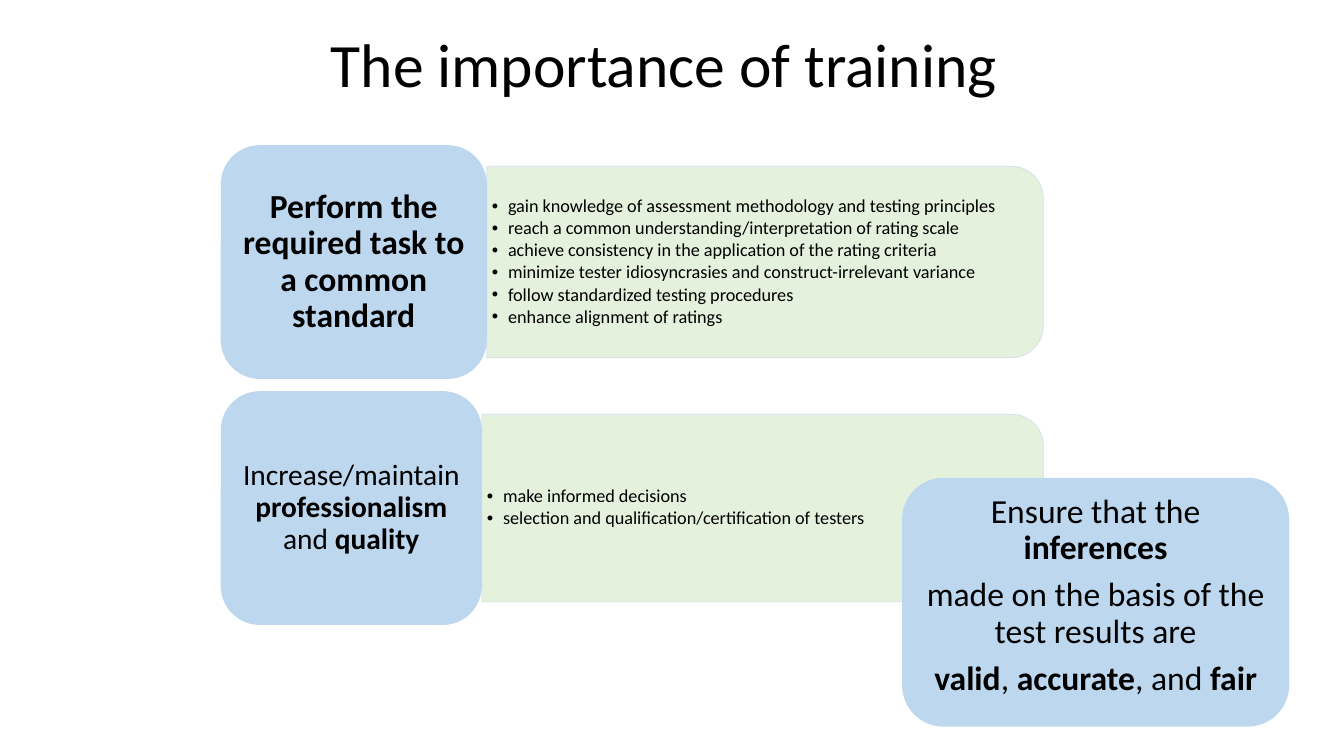
from lxml.etree import SubElement
from pptx import Presentation
from pptx.dml.color import RGBColor
from pptx.enum.shapes import MSO_SHAPE as Preset
from pptx.enum.text import MSO_ANCHOR as Anchor, PP_ALIGN as Align
from pptx.oxml.ns import qn
from pptx.util import Pt

# Content: each paragraph of a card is a list of (text, bold) spans
TITLE = "The importance of training"
ROWS = [
    dict(
        top=103.7, width=190, panel_height=136.8, size=24,
        card=[[("Perform the required task to a common standard", True)]],
        points=[
            "gain knowledge of assessment methodology and testing principles",
            "reach a common understanding/interpretation of rating scale",
            "achieve consistency in the application of the rating criteria",
            "minimize tester idiosyncrasies and construct-irrelevant variance",
            "follow standardized testing procedures",
            "enhance alignment of ratings",
        ],
    ),
    dict(
        top=279.4, width=186.5, panel_height=134, size=21,
        card=[[("Increase/maintain ", False), ("professionalism", True),
               (" and ", False), ("quality", True)]],
        points=[
            "make informed decisions",
            "selection and qualification/certification of testers",
        ],
    ),
]
OUTCOME = [
    [("Ensure that the ", False), ("inferences", True)],
    [("made on the basis of the test results are", False)],
    [("valid", True), (", ", False), ("accurate", True),
     (", and ", False), ("fair", True)],
]

# Style and layout, in points
FONT = "Calibri"
BLACK, BLUE, GREEN, EDGE = "000000", "BDD7EE", "E2F0D9", "D2DEEF"
CARD_LEFT, CARD_HEIGHT, PANEL_RIGHT = 157.7, 167, 745.2
TEXT_GAP, BULLET_INDENT = 6.6, 11.6


def color(value):
    return RGBColor.from_string(value)


def set_alpha(fill_format, parent, percent):
    """Make the solid fill under the given XML element partly transparent."""
    fill_format.solid()
    tint = parent.find(qn("a:solidFill"))[0]
    SubElement(tint, qn("a:alpha"), val=str(percent * 1000))


def add_bullet(para):
    props = para._p.get_or_add_pPr()
    props.set("marL", str(Pt(BULLET_INDENT)))
    props.set("indent", str(-Pt(BULLET_INDENT)))
    SubElement(props, qn("a:buFont"), typeface="Arial")
    SubElement(props, qn("a:buChar"), char="•")


def write(shape, paragraphs, size=24, align=Align.LEFT, after=0,
          insets=(6, 4, 6, 4), bullets=False):
    frame = shape.text_frame
    frame.word_wrap = True
    frame.vertical_anchor = Anchor.MIDDLE
    (frame.margin_left, frame.margin_top,
     frame.margin_right, frame.margin_bottom) = map(Pt, insets)
    for number, spans in enumerate(paragraphs):
        para = frame.add_paragraph() if number else frame.paragraphs[0]
        para.alignment = align
        para.line_spacing = 0.9
        para.space_before = Pt(0)
        para.space_after = Pt(after)
        if bullets:
            add_bullet(para)
        for text, bold in spans:
            span = para.add_run()
            span.text = text
            span.font.name = FONT
            span.font.size = Pt(size)
            span.font.bold = bold
            span.font.color.rgb = color(BLACK)


def add_card(page, left, top, width, height, paragraphs, **text_format):
    card = page.shapes.add_shape(
        Preset.ROUNDED_RECTANGLE, Pt(left), Pt(top), Pt(width), Pt(height))
    card.shadow.inherit = False
    card.fill.solid()
    card.fill.fore_color.rgb = color(BLUE)
    card.line.fill.background()
    write(card, paragraphs, align=Align.CENTER, after=8, **text_format)


def add_panel(page, left, middle, width, height, points):
    # A quarter turn puts the two rounded corners on the right
    panel = page.shapes.add_shape(
        Preset.ROUND_2_SAME_RECTANGLE,
        Pt(left + (width - height) / 2), Pt(middle - width / 2),
        Pt(height), Pt(width))
    panel.rotation = 90
    panel.shadow.inherit = False
    panel.fill.solid()
    panel.fill.fore_color.rgb = color(GREEN)
    set_alpha(panel.fill, panel._element.spPr, 90)
    panel.line.width = Pt(0.5)
    panel.line.color.rgb = color(EDGE)
    set_alpha(panel.line.fill, panel.line._ln, 90)

    # Upright text over the turned shape
    box = page.shapes.add_textbox(
        Pt(left), Pt(middle - height / 2 + TEXT_GAP),
        Pt(width - TEXT_GAP), Pt(height - 2 * TEXT_GAP))
    write(box, [[(point, False)] for point in points], size=13, after=1.7,
          insets=(3.6, 2, 3.6, 2), bullets=True)


def main():
    deck = Presentation()
    deck.slide_width, deck.slide_height = Pt(960), Pt(540)
    page = deck.slides.add_slide(deck.slide_layouts[5])

    # Title
    title = page.shapes.title
    title.left, title.top, title.width, title.height = map(
        Pt, (229, 12.2, 496, 72))
    write(title, [[(TITLE, False)]], size=44, insets=(7.2, 3.6, 7.2, 3.6))

    # Rows: a green panel beside a blue card
    for row in ROWS:
        panel_left = CARD_LEFT + row["width"]
        add_panel(page, panel_left, row["top"] + CARD_HEIGHT / 2,
                  PANEL_RIGHT - panel_left, row["panel_height"], row["points"])
        add_card(page, CARD_LEFT, row["top"], row["width"], CARD_HEIGHT,
                 row["card"], size=row["size"])

    # Outcome card, its text set slightly above the middle
    add_card(page, 644.4, 341.3, 276.5, 177.8, OUTCOME, insets=(6, 4, 6, 13))

    deck.save("out.pptx")


if __name__ == "__main__":
    main()
